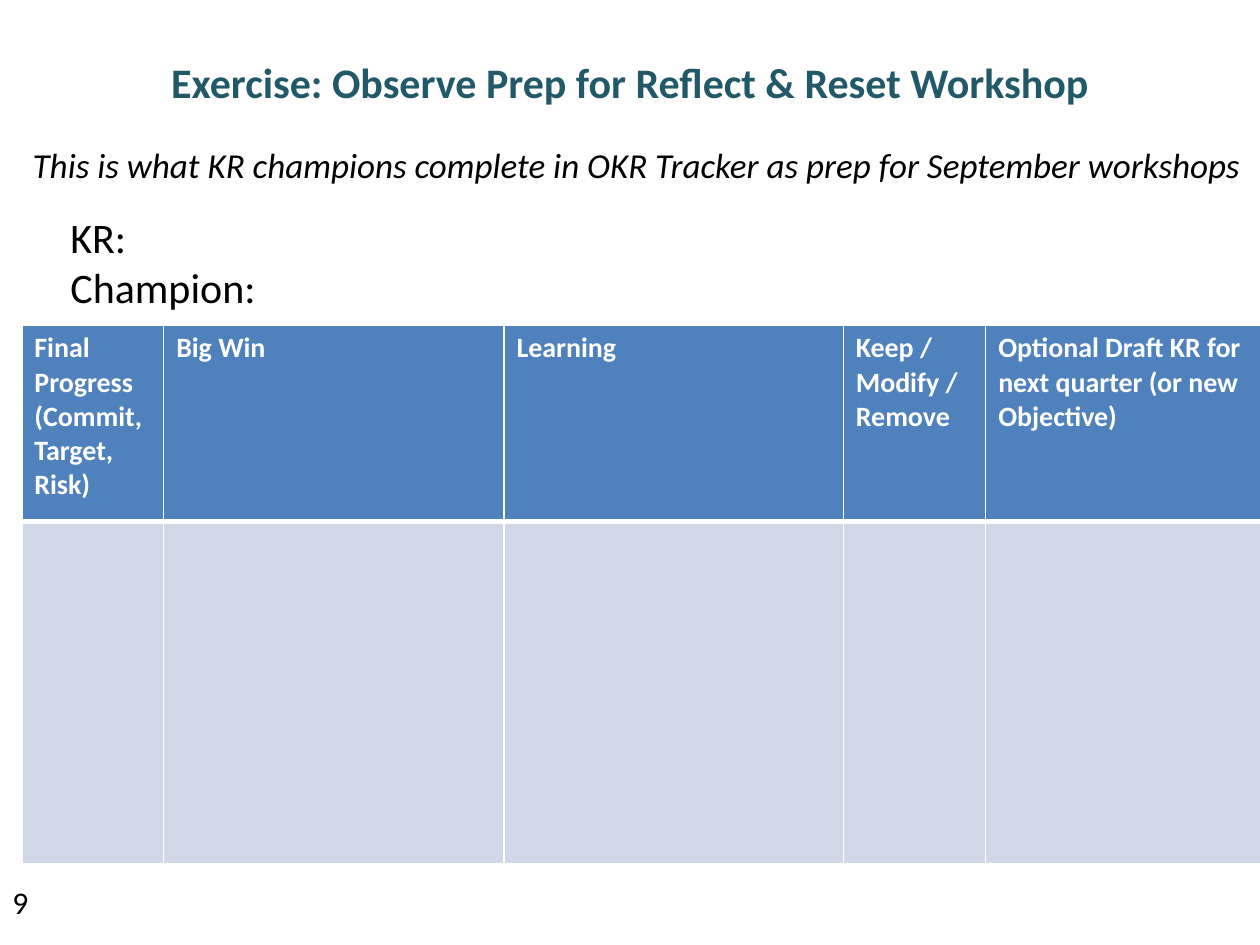
from lxml.etree import SubElement
from pptx import Presentation
from pptx.dml.color import RGBColor
from pptx.enum.text import MSO_ANCHOR as Anchor, PP_ALIGN as Align
from pptx.oxml.ns import qn
from pptx.util import Cm, Pt

BLACK = RGBColor(0x00, 0x00, 0x00)
WHITE = RGBColor(0xFF, 0xFF, 0xFF)
TEAL = RGBColor(0x21, 0x59, 0x68)
BLUE = RGBColor(0x4F, 0x81, 0xBD)
PALE_BLUE = RGBColor(0xD0, 0xD8, 0xE8)


def write(frame, text, size=18, color=BLACK, bold=False, italic=False,
          align=Align.LEFT, wrap=True):
    """Fill a text frame, one paragraph for each line of text."""
    frame.word_wrap = wrap
    frame.vertical_anchor = Anchor.TOP
    for number, line in enumerate(text.split("\n")):
        para = frame.paragraphs[0] if number == 0 else frame.add_paragraph()
        para.alignment = align
        span = para.add_run()
        span.text = line
        span.font.name = "Calibri"
        span.font.size = Pt(size)
        span.font.bold = bold
        span.font.italic = italic
        span.font.color.rgb = color


def set_borders(cell, **widths):
    """Draw white cell borders; widths in points by side, in schema order."""
    properties = cell._tc.get_or_add_tcPr()
    for side, width in widths.items():
        line = SubElement(properties, qn(f"a:ln{side}"), w=str(Pt(width)))
        fill = SubElement(line, qn("a:solidFill"))
        SubElement(fill, qn("a:srgbClr"), val=str(WHITE))


deck = Presentation()
deck.slide_width, deck.slide_height = Cm(25.4), Cm(19.05)
slide = deck.slides.add_slide(deck.slide_layouts[6])

# Title, subtitle, key result labels and page number
texts = [
    ((1.75, 1.02, 21.9, 3.68), "Exercise: Observe Prep for Reflect & Reset Workshop",
     dict(size=24, color=TEAL, bold=True, align=Align.CENTER)),
    ((0.41, 2.77, 26.04, 1.12),
     "This is what KR champions complete in OKR Tracker as prep for September workshops",
     dict(size=20, italic=True)),
    ((1.17, 4.14, 4.47, 2.31), "KR:\nChampion:", dict(size=24, wrap=False)),
    ((0, 17.68, 2.34, 1.02), "9", dict(size=18)),
]
for place, text, style in texts:
    box = slide.shapes.add_textbox(*map(Cm, place))
    write(box.text_frame, text, **style)

# Review table: a header row above an empty row to fill in
columns = [
    ("Final\nProgress\n(Commit,\nTarget,\nRisk)", 2.86),
    ("Big Win", 6.86),
    ("Learning", 6.84),
    ("Keep / Modify / Remove", 2.87),
    ("Optional Draft KR for next quarter (or new Objective)", 5.54),
]
table = slide.shapes.add_table(
    2, len(columns), Cm(0.44), Cm(6.55), Cm(24.97), Cm(10.87)).table
table.rows[0].height, table.rows[1].height = Cm(3.96), Cm(6.91)
for index, (heading, width) in enumerate(columns):
    table.columns[index].width = Cm(width)
    header, body = table.cell(0, index), table.cell(1, index)
    write(header.text_frame, heading, size=16, color=WHITE, bold=True)
    set_borders(header, L=1, R=1, T=1, B=3)
    set_borders(body, L=1, R=1, T=3, B=1)
    for cell, color in ((header, BLUE), (body, PALE_BLUE)):
        cell.fill.solid()
        cell.fill.fore_color.rgb = color

deck.save("out.pptx")
